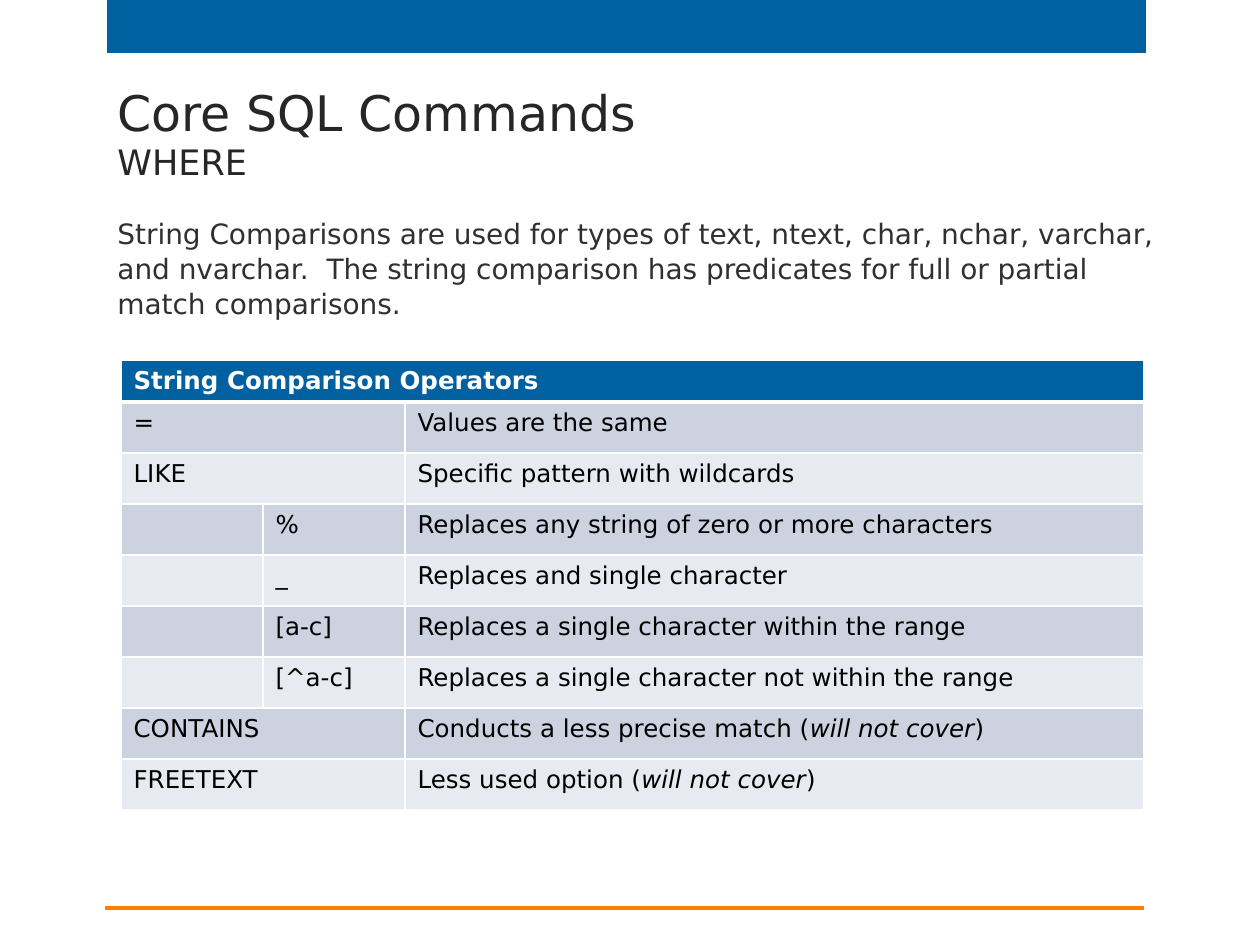
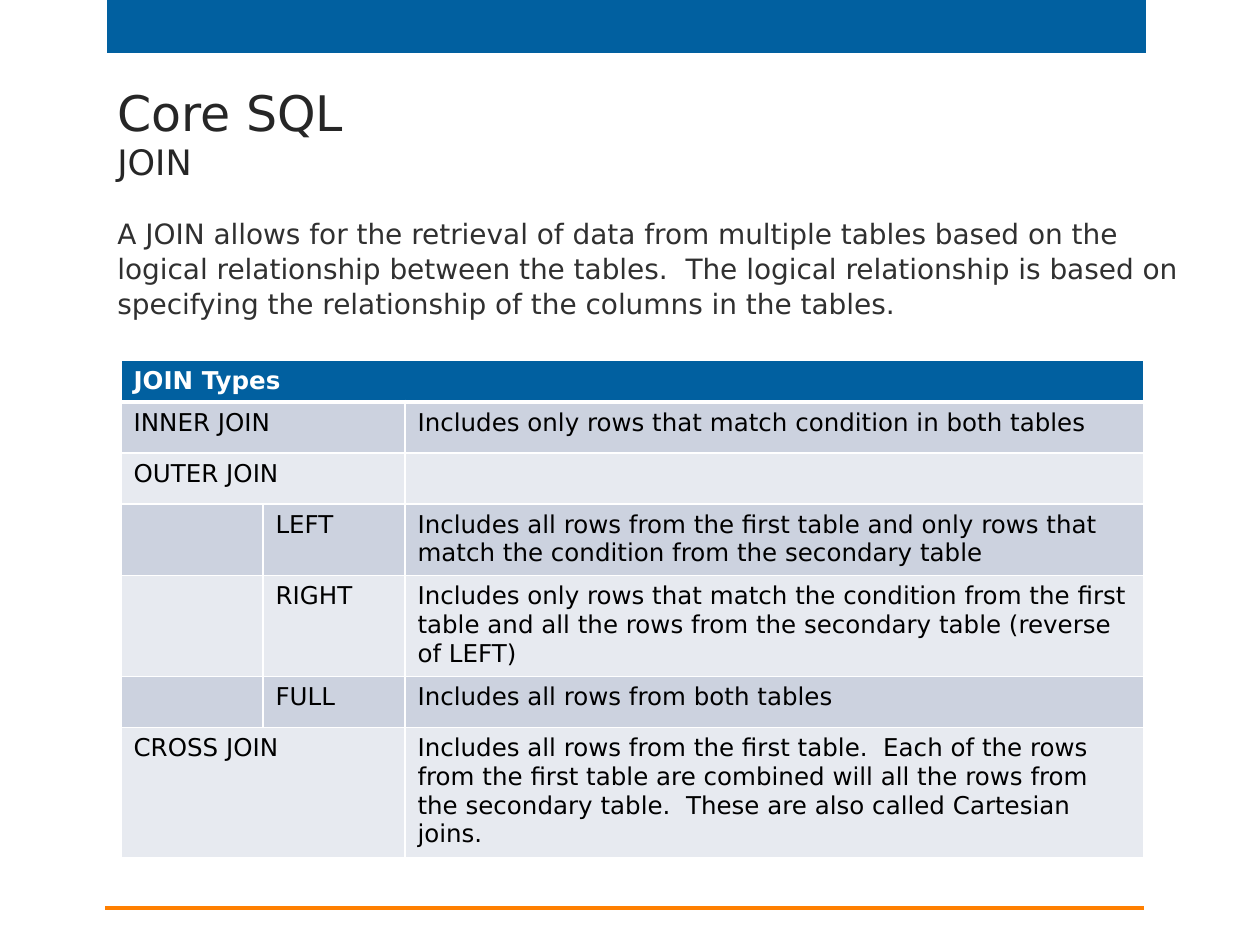
from typing import NamedTuple

from lxml import etree
from pptx import Presentation
from pptx.dml.color import RGBColor
from pptx.enum.shapes import MSO_SHAPE
from pptx.enum.text import MSO_ANCHOR
from pptx.oxml.ns import qn
from pptx.util import Emu, Pt

RECTANGLE = MSO_SHAPE.RECTANGLE
TOP = MSO_ANCHOR.TOP

# Shared look
EMU_PER_PX = 914400 / 126
FONT = "DejaVu Sans"
BLUE, ORANGE, WHITE, BLACK = "0160A0", "FF7F00", "FFFFFF", "000000"
TITLE_GREY, BODY_GREY = "262626", "303030"
ROW_FILLS = ("CCD2DF", "E7EAF0")

# Table grid
COLUMN_WIDTHS = (142, 142, 739)
HEADER_HEIGHT, ROW_HEIGHT = 41, 51
THIN, THICK = 1, 3


class Box(NamedTuple):
    left: int
    top: int
    width: int
    height: int


class Band(NamedTuple):
    box: Box
    fill: str


class Style(NamedTuple):
    size: int
    color: str
    bold: bool = False


class Entry(NamedTuple):
    term: str
    description: tuple[str, ...] = ()  # every second part is italic
    nested: bool = False


class Topic(NamedTuple):
    title: str
    subtitle: str
    intro: str
    table_heading: str
    entries: tuple[Entry, ...]


BANDS = (
    Band(Box(107, 0, 1039, 53), BLUE),
    Band(Box(105, 906, 1039, 4), ORANGE),
)
TITLE_BOX = Box(105, 71, 935, 160)
INTRO_BOX = Box(105, 209, 1090, 118)
TABLE_LEFT, TABLE_TOP = 121, 360

TITLE = Style(28, TITLE_GREY)
SUBTITLE = Style(20, TITLE_GREY)
INTRO = Style(16, BODY_GREY)
HEADING = Style(14, WHITE, bold=True)
CELL = Style(14, BLACK)

# Content
TOPICS = (
    Topic(
        "Core SQL Commands",
        "WHERE",
        "String Comparisons are used for types of text, ntext, char, nchar, "
        "varchar, and nvarchar.  The string comparison has predicates for "
        "full or partial match comparisons.",
        "String Comparison Operators",
        (
            Entry("=", ("Values are the same",)),
            Entry("LIKE", ("Specific pattern with wildcards",)),
            Entry("%", ("Replaces any string of zero or more characters",), True),
            Entry("_", ("Replaces and single character",), True),
            Entry("[a-c]", ("Replaces a single character within the range",), True),
            Entry("[^a-c]", ("Replaces a single character not within the range",), True),
            Entry("CONTAINS", ("Conducts a less precise match (", "will not cover", ")")),
            Entry("FREETEXT", ("Less used option (", "will not cover", ")")),
        ),
    ),
    Topic(
        "Core SQL",
        "JOIN",
        "A JOIN allows for the retrieval of data from multiple tables based "
        "on the logical relationship between the tables.  The logical "
        "relationship is based on specifying the relationship of the columns "
        "in the tables.",
        "JOIN Types",
        (
            Entry("INNER JOIN", ("Includes only rows that match condition in both tables",)),
            Entry("OUTER JOIN"),
            Entry("LEFT", ("Includes all rows from the first table and only rows that "
                           "match the condition from the secondary table",), True),
            Entry("RIGHT", ("Includes only rows that match the condition from the first "
                            "table and all the rows from the secondary table (reverse "
                            "of LEFT)",), True),
            Entry("FULL", ("Includes all rows from both tables",), True),
            Entry("CROSS JOIN", ("Includes all rows from the first table.  Each of the rows "
                                 "from the first table are combined will all the rows from "
                                 "the secondary table.  These are also called Cartesian "
                                 "joins.",)),
        ),
    ),
)


def px(length: int) -> Emu:
    return Emu(round(length * EMU_PER_PX))


def place(box: Box) -> tuple[Emu, ...]:
    return tuple(px(length) for length in box)


def rgb(color: str) -> RGBColor:
    return RGBColor.from_string(color)


def paint(target, color: str) -> None:
    target.fill.solid()
    target.fill.fore_color.rgb = rgb(color)


def add_run(paragraph, text: str, style: Style, italic: bool = False) -> None:
    run = paragraph.add_run()
    run.text = text
    run.font.name = FONT
    run.font.size = Pt(style.size)
    run.font.bold = style.bold
    run.font.italic = italic
    run.font.color.rgb = rgb(style.color)


def draw_band(slide, band: Band) -> None:
    stripe = slide.shapes.add_shape(RECTANGLE, *place(band.box))
    stripe.shadow.inherit = False
    paint(stripe, band.fill)
    stripe.line.fill.background()


def add_text_frame(slide, box: Box):
    frame = slide.shapes.add_textbox(*place(box)).text_frame
    frame.word_wrap = True
    frame.vertical_anchor = TOP
    return frame


def draw_title(slide, topic: Topic) -> None:
    frame = add_text_frame(slide, TITLE_BOX)
    frame.margin_top = px(11)
    paragraph = frame.paragraphs[0]
    add_run(paragraph, topic.title, TITLE)
    paragraph.add_line_break()
    add_run(paragraph, topic.subtitle, SUBTITLE)


def draw_intro(slide, topic: Topic) -> None:
    paragraph = add_text_frame(slide, INTRO_BOX).paragraphs[0]
    paragraph.space_before = Pt(6)
    paragraph.line_spacing = 1.04
    add_run(paragraph, topic.intro, INTRO)


def set_borders(cell, top: int, bottom: int) -> None:
    """Give the cell white borders, with widths in points."""
    properties = cell._tc.get_or_add_tcPr()
    sides = (("a:lnL", THIN), ("a:lnR", THIN), ("a:lnT", top), ("a:lnB", bottom))
    for index, (side, width) in enumerate(sides):
        line = etree.Element(qn(side), w=str(Pt(width)))
        fill = etree.SubElement(line, qn("a:solidFill"))
        etree.SubElement(fill, qn("a:srgbClr"), val=WHITE)
        properties.insert(index, line)


def draw_table(slide, topic: Topic) -> None:
    row_count = len(topic.entries) + 1
    box = Box(TABLE_LEFT, TABLE_TOP, sum(COLUMN_WIDTHS),
              HEADER_HEIGHT + ROW_HEIGHT * len(topic.entries))
    table = slide.shapes.add_table(row_count, len(COLUMN_WIDTHS), *place(box)).table
    for column, width in zip(table.columns, COLUMN_WIDTHS):
        column.width = px(width)

    # Row heights, banded fills and borders
    for number, row in enumerate(table.rows):
        row.height = px(ROW_HEIGHT if number else HEADER_HEIGHT)
        for cell in row.cells:
            paint(cell, ROW_FILLS[(number - 1) % 2] if number else BLUE)
            set_borders(cell, top=THICK if number == 1 else THIN,
                        bottom=THIN if number else THICK)

    # Heading and entries
    heading = table.cell(0, 0)
    heading.merge(table.cell(0, 2))
    add_run(heading.text_frame.paragraphs[0], topic.table_heading, HEADING)
    for number, entry in enumerate(topic.entries, start=1):
        if not entry.nested:
            table.cell(number, 0).merge(table.cell(number, 1))
        term = table.cell(number, int(entry.nested))
        add_run(term.text_frame.paragraphs[0], entry.term, CELL)
        description = table.cell(number, 2).text_frame.paragraphs[0]
        for index, part in enumerate(entry.description):
            add_run(description, part, CELL, italic=index % 2 == 1)


def main() -> None:
    deck = Presentation()
    deck.slide_width, deck.slide_height = px(1260), px(945)
    blank = deck.slide_layouts[6]
    for topic in TOPICS:
        slide = deck.slides.add_slide(blank)
        for band in BANDS:
            draw_band(slide, band)
        draw_title(slide, topic)
        draw_intro(slide, topic)
        draw_table(slide, topic)
    deck.save("out.pptx")


if __name__ == "__main__":
    main()
